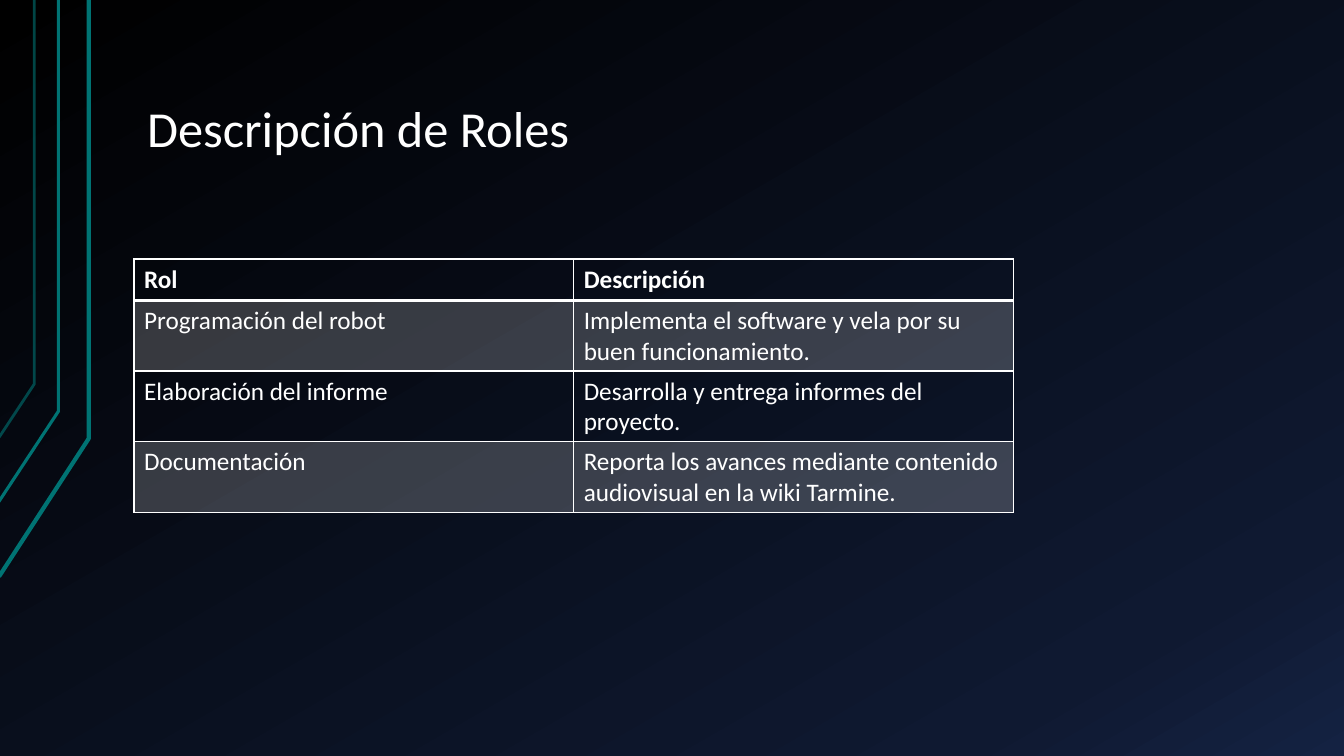
from copy import deepcopy
from pptx import Presentation
from pptx.dml.color import RGBColor as RGB
from pptx.enum.text import MSO_ANCHOR as Anchor
from pptx.oxml import parse_xml
from pptx.oxml.ns import nsdecls
from pptx.util import Inches, Pt

WHITE = RGB(255, 255, 255)
TEAL = RGB(0, 115, 115)
BLACK = RGB(0, 0, 0)
NAVY = RGB(15, 25, 49)
BLUE = RGB(20, 34, 66)


def style(run, size, bold=False):
    form = {"name": "Calibri", "size": Pt(size), "bold": bold}
    for key, value in form.items():
        setattr(run.font, key, value)
    run.font.color.rgb = WHITE


def fade(node, share):
    for color in node.xpath(".//a:srgbClr"):
        color.append(parse_xml(f'<a:alpha {nsdecls("a")} val="{share * 1000}"/>'))


deck = Presentation()
deck.slide_width, deck.slide_height = Inches(13.33), Inches(7.5)
slide = deck.slides.add_slide(deck.slide_layouts[6])
shapes = slide.shapes

back = slide.background.fill
back.gradient()
back.gradient_angle = 300
stops = slide.element.xpath(".//p:bg//a:gsLst")[0]
stops.append(deepcopy(stops[0]))
for stop, (place, color) in zip(back.gradient_stops, [(0, BLACK), (0.85, NAVY), (1, BLUE)]):
    stop.position = place
    stop.color.rgb = color

bends = [
    (-0.01, 5.72, 0.88, 4.35, 3, 100),
    (-0.02, 4.99, 0.58, 4.08, 2.25, 100),
    (-0.01, 4.34, 0.34, 3.81, 2, 60),
]
for left, low, right, bend, width, share in bends:
    pen = shapes.build_freeform(Inches(left), Inches(low))
    pen.add_line_segments([(Inches(right), Inches(bend)), (Inches(right), 0)], close=False)
    stripe = pen.convert_to_shape()
    stripe.shadow.inherit = False
    stripe.fill.background()
    stripe.line.color.rgb = TEAL
    stripe.line.width = Pt(width)
    if share < 100:
        fade(stripe.element, share)

title = shapes.add_textbox(Inches(1.33), Inches(0.3), Inches(11.33), Inches(1.34))
frame = title.text_frame
form = {
    "word_wrap": True,
    "vertical_anchor": Anchor.BOTTOM,
    "margin_left": Inches(0.13),
    "margin_right": Inches(0.13),
    "margin_top": Inches(0.07),
    "margin_bottom": Inches(0.07),
}
for key, value in form.items():
    setattr(frame, key, value)
para = frame.paragraphs[0]
para.line_spacing = 0.9
run = para.add_run()
run.text = "Descripción de Roles"
style(run, 36)

roles = [
    ("Rol", "Descripción"),
    ("Programación del robot", "Implementa el software y vela por su buen funcionamiento."),
    ("Elaboración del informe", "Desarrolla y entrega informes del proyecto."),
    ("Documentación", "Reporta los avances mediante contenido audiovisual en la wiki Tarmine."),
]
table = shapes.add_table(4, 2, Inches(1.33), Inches(2.57), Inches(8.72), Inches(2.51)).table
for row, texts in enumerate(roles):
    table.rows[row].height = Inches(0.7 if row else 0.41)
    for col, text in enumerate(texts):
        cell = table.cell(row, col)
        run = cell.text_frame.paragraphs[0].add_run()
        run.text = text
        style(run, 18, row == 0)
        props = cell._tc.get_or_add_tcPr()
        if row % 2:
            cell.fill.solid()
            cell.fill.fore_color.rgb = WHITE
            fade(props, 20)
        else:
            cell.fill.background()
        for spot, side in enumerate("LRTB"):
            thick = (row, side) in [(0, "B"), (1, "T")]
            props.insert(spot, parse_xml(
                f'<a:ln{side} {nsdecls("a")} w="{Pt(2 if thick else 1)}">'
                f'<a:solidFill><a:srgbClr val="{WHITE}"/></a:solidFill></a:ln{side}>'))

deck.save("out.pptx")
